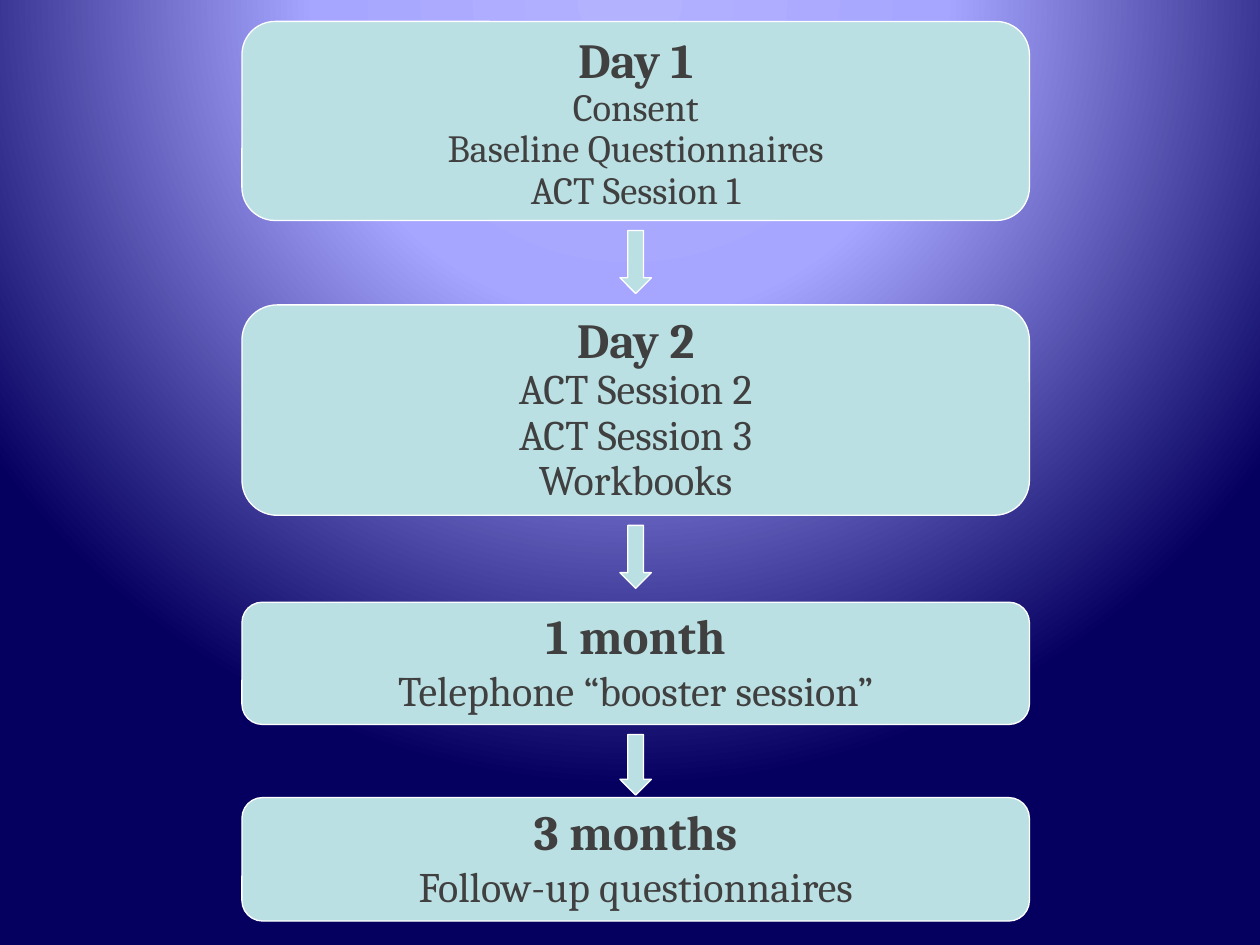
from dataclasses import dataclass

import pptx
import pptx.dml.color
import pptx.enum.shapes
import pptx.enum.text
import pptx.oxml
import pptx.oxml.ns
import pptx.util
from pptx.dml.color import RGBColor
from pptx.enum.shapes import MSO_SHAPE
from pptx.util import Inches

PALE_TEAL = RGBColor(0xBB, 0xE0, 0xE3)
WHITE = RGBColor(0xFF, 0xFF, 0xFF)
DARK_GREY = RGBColor(0x40, 0x40, 0x40)
LAVENDER = RGBColor(0xB3, 0xB2, 0xFF)
PERIWINKLE = RGBColor(0xA6, 0xA5, 0xFF)
NAVY = RGBColor(0x05, 0x00, 0x5F)

FONT = "Cambria"
CENTER_X = 5.045
STAGE_WIDTH = 6.25
ARROW_WIDTH = 0.25
ARROW_GAP = 0.08


@dataclass
class Stage:
    top: float
    height: float
    title: str
    details: list[str]
    detail_size: int = 24
    line_spacing: float = 1.0
    bottom_inset: float = 0.05
    arrow_height: float = 0.5


STAGES = [
    Stage(0.17, 1.58, "Day 1",
          ["Consent", "Baseline Questionnaires", "ACT Session 1"],
          detail_size=22, line_spacing=0.9, bottom_inset=0),
    Stage(2.42, 1.67, "Day 2",
          ["ACT Session 2", "ACT Session 3", "Workbooks"], line_spacing=0.9),
    Stage(4.78, 0.97, "1 month", ["Telephone “booster session”"],
          arrow_height=0.48),
    Stage(6.33, 0.98, "3 months", ["Follow-up questionnaires"]),
]


def set_background(s: pptx.slide.Slide) -> None:
    """Fill the slide with a circular gradient centred above its top edge."""
    stops = "".join(
        f'<a:gs pos="{pos * 1000}"><a:srgbClr val="{color}"/></a:gs>'
        for pos, color in [(0, LAVENDER), (40, PERIWINKLE), (100, NAVY)])
    bg = pptx.oxml.parse_xml(
        f'<p:bg {pptx.oxml.ns.nsdecls("p", "a")}><p:bgPr>'
        f'<a:gradFill rotWithShape="1"><a:gsLst>{stops}</a:gsLst>'
        '<a:path path="circle">'
        '<a:fillToRect l="50000" t="-80000" r="50000" b="180000"/>'
        '</a:path></a:gradFill><a:effectLst/></p:bgPr></p:bg>')
    s.element.cSld.insert(0, bg)


def add_centered_shape(s: pptx.slide.Slide, kind: MSO_SHAPE, top: float,
                       width: float, height: float) -> pptx.shapes.autoshape.Shape:
    sp = s.shapes.add_shape(kind, Inches(CENTER_X - width / 2), Inches(top),
                            Inches(width), Inches(height))
    sp.shadow.inherit = False
    sp.fill.solid()
    sp.fill.fore_color.rgb = PALE_TEAL
    sp.line.color.rgb = WHITE
    sp.line.width = pptx.util.Pt(0.75)
    return sp


def add_stage(s: pptx.slide.Slide, stage: Stage) -> None:
    sp = add_centered_shape(s, MSO_SHAPE.ROUNDED_RECTANGLE, stage.top,
                            STAGE_WIDTH, stage.height)
    tf = sp.text_frame
    tf.word_wrap = True
    tf.vertical_anchor = pptx.enum.text.MSO_ANCHOR.MIDDLE
    tf.margin_left = tf.margin_right = Inches(0.1)
    tf.margin_top = 0
    tf.margin_bottom = Inches(stage.bottom_inset)
    tf.text = "\n".join([stage.title, *stage.details])
    for i, p in enumerate(tf.paragraphs):
        is_title = i == 0
        p.alignment = pptx.enum.text.PP_ALIGN.CENTER
        p.line_spacing = 1.0 if is_title else stage.line_spacing
        for r in p.runs:
            r.font.name = FONT
            r.font.size = pptx.util.Pt(28 if is_title else stage.detail_size)
            r.font.bold = is_title
            r.font.color.rgb = DARK_GREY


def main() -> None:
    prs = pptx.Presentation()
    prs.slide_width, prs.slide_height = Inches(10), Inches(7.5)
    s = prs.slides.add_slide(prs.slide_layouts[6])
    set_background(s)
    for stage in STAGES:
        add_stage(s, stage)
    for stage in STAGES[:-1]:
        add_centered_shape(s, MSO_SHAPE.DOWN_ARROW,
                           stage.top + stage.height + ARROW_GAP,
                           ARROW_WIDTH, stage.arrow_height)
    prs.save("out.pptx")


if __name__ == "__main__":
    main()
